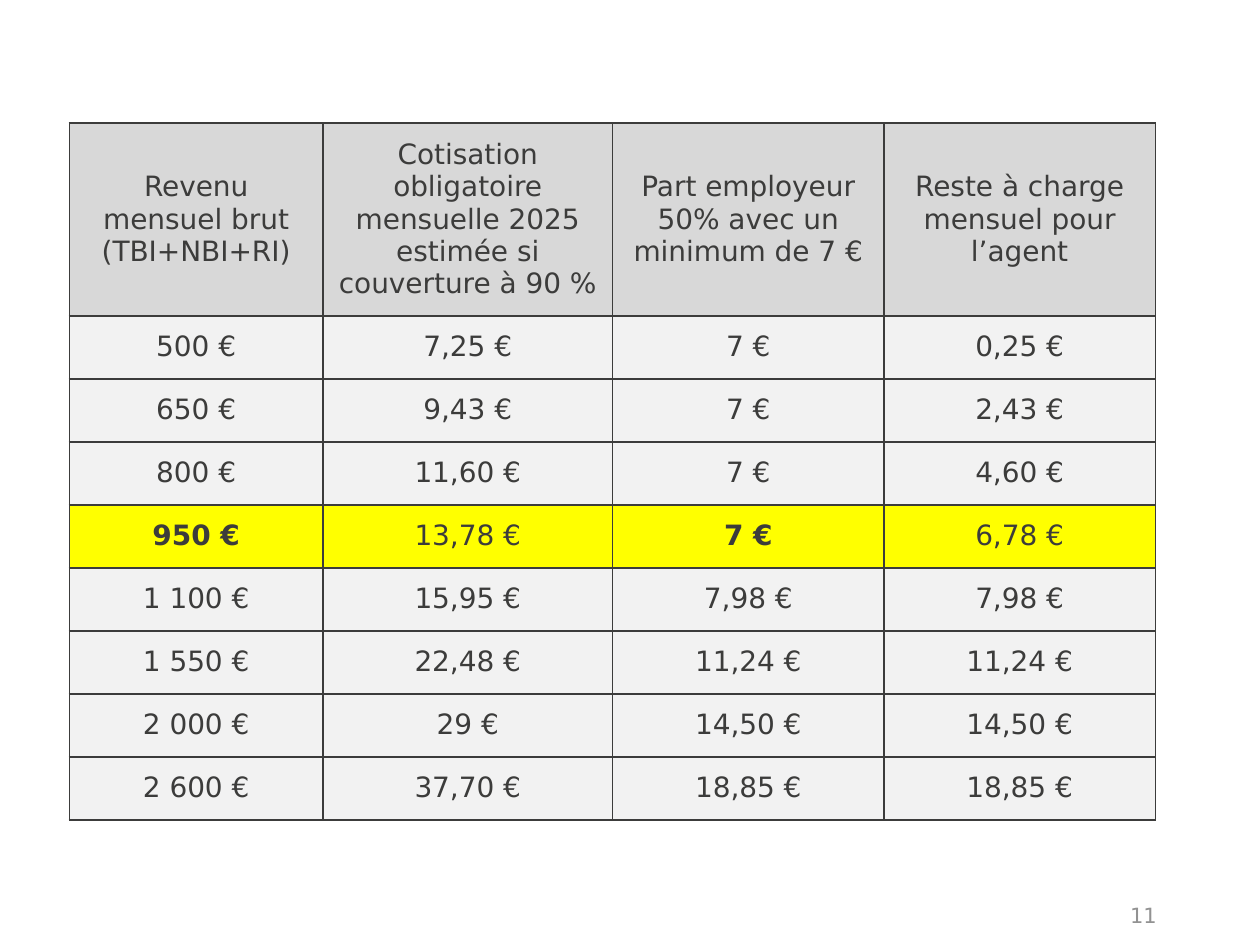
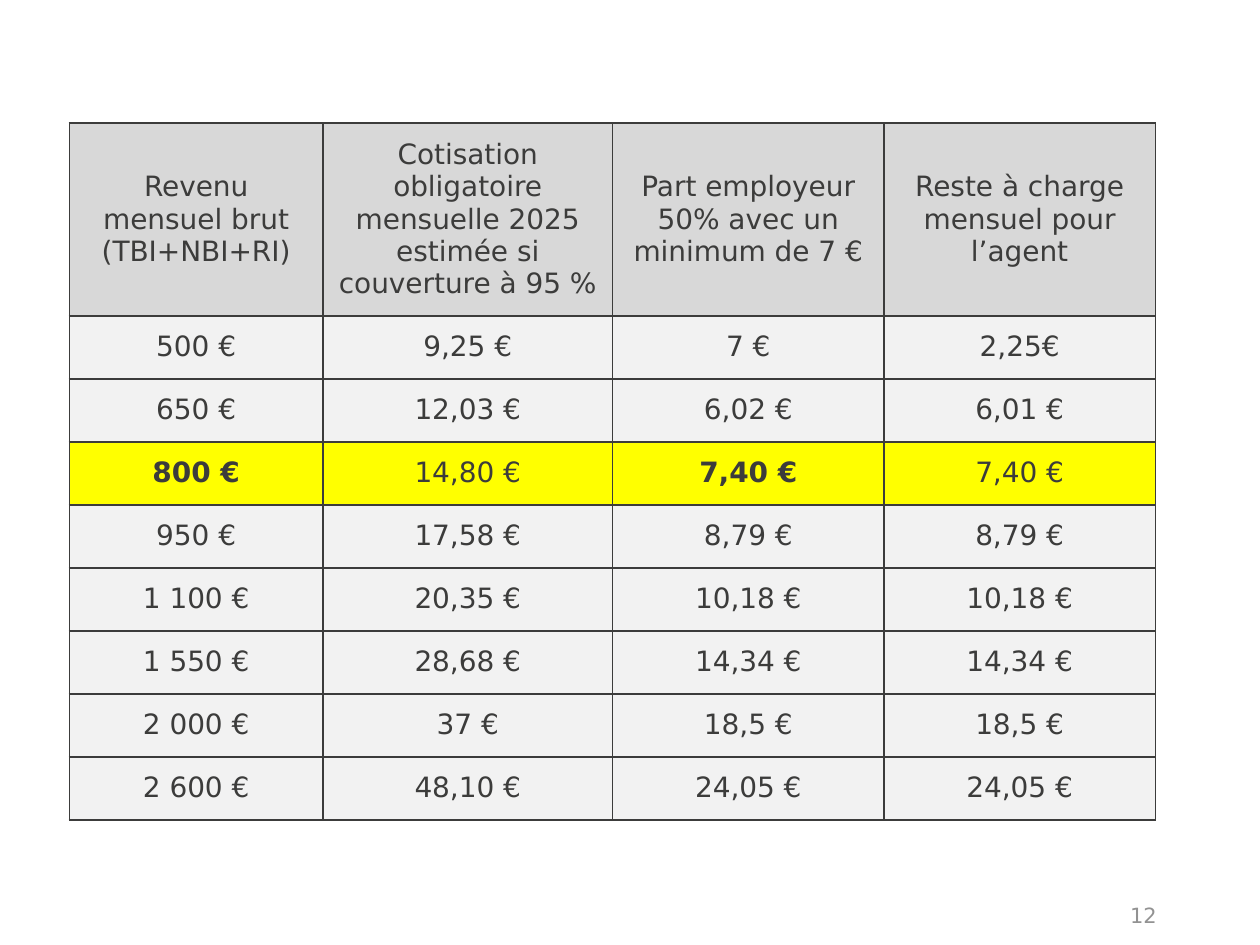
import dataclasses

import lxml.etree
import pptx
import pptx.dml.color
import pptx.enum.text
import pptx.oxml.ns
import pptx.presentation
import pptx.slide
import pptx.table
import pptx.text.text
import pptx.util
from pptx.util import Cm

FONT = "DejaVu Sans"
INK = "3C3C3B"
GREY = "929292"
HEADER_FILL = "D8D8D8"
BODY_FILL = "F2F2F2"
HIGHLIGHT_FILL = "FFFF00"

COLUMN_WIDTHS = (5.11, 5.84, 5.47, 5.47)
HEADER_HEIGHT = 3.48
ROW_HEIGHT = 1.27
CELL_MARGIN = Cm(0.25)
BOLD_COLUMNS = (0, 2)
INCOMES = ("500 €", "650 €", "800 €", "950 €",
           "1 100 €", "1 550 €", "2 000 €", "2 600 €")


@dataclasses.dataclass(frozen=True)
class ContributionPage:
    number: int
    coverage: str
    highlighted_income: str
    amounts: tuple[tuple[str, str, str], ...]

    def header(self) -> tuple[str, ...]:
        return (
            "Revenu mensuel brut (TBI+NBI+RI)",
            f"Cotisation obligatoire mensuelle 2025 estimée si couverture à {self.coverage}",
            "Part employeur 50% avec un minimum de 7 €",
            "Reste à charge mensuel pour l’agent",
        )


PAGES = (
    ContributionPage(11, "90 %", "950 €", (
        ("7,25 €", "7 €", "0,25 €"),
        ("9,43 €", "7 €", "2,43 €"),
        ("11,60 €", "7 €", "4,60 €"),
        ("13,78 €", "7 €", "6,78 €"),
        ("15,95 €", "7,98 €", "7,98 €"),
        ("22,48 €", "11,24 €", "11,24 €"),
        ("29 €", "14,50 €", "14,50 €"),
        ("37,70 €", "18,85 €", "18,85 €"),
    )),
    ContributionPage(12, "95 %", "800 €", (
        ("9,25 €", "7 €", "2,25€"),
        ("12,03 €", "6,02 €", "6,01 €"),
        ("14,80 €", "7,40 €", "7,40 €"),
        ("17,58 €", "8,79 €", "8,79 €"),
        ("20,35 €", "10,18 €", "10,18 €"),
        ("28,68 €", "14,34 €", "14,34 €"),
        ("37 €", "18,5 €", "18,5 €"),
        ("48,10 €", "24,05 €", "24,05 €"),
    )),
)


def color(value: str) -> pptx.dml.color.RGBColor:
    return pptx.dml.color.RGBColor.from_string(value)


def write_text(frame: pptx.text.text.TextFrame, text: str, *, size: int = 16,
               ink: str = INK, bold: bool = False, align: str = "CENTER") -> None:
    frame.word_wrap = True
    para = frame.paragraphs[0]
    para.alignment = pptx.enum.text.PP_ALIGN[align]
    span = para.add_run()
    span.text = text
    span.font.name = FONT
    span.font.size = pptx.util.Pt(size)
    span.font.bold = bold
    span.font.color.rgb = color(ink)


def add_borders(cell: pptx.table._Cell) -> None:
    properties = cell._tc.get_or_add_tcPr()
    name = pptx.oxml.ns.qn
    for side in ("a:lnL", "a:lnR", "a:lnT", "a:lnB"):
        line = lxml.etree.SubElement(properties, name(side), w=str(pptx.util.Pt(1)))
        fill = lxml.etree.SubElement(line, name("a:solidFill"))
        lxml.etree.SubElement(fill, name("a:srgbClr"), val=INK)


def format_cell(cell: pptx.table._Cell, text: str, *, fill: str, bold: bool) -> None:
    cell.margin_left = cell.margin_right = CELL_MARGIN
    cell.margin_top = cell.margin_bottom = CELL_MARGIN
    cell.vertical_anchor = pptx.enum.text.MSO_ANCHOR.MIDDLE
    add_borders(cell)
    cell.fill.solid()
    cell.fill.fore_color.rgb = color(fill)
    write_text(cell.text_frame, text, bold=bold)


def add_contribution_table(slide: pptx.slide.Slide, page: ContributionPage) -> None:
    rows = [page.header()]
    rows += [(income, *amounts) for income, amounts in zip(INCOMES, page.amounts)]
    heights = [HEADER_HEIGHT] + [ROW_HEIGHT] * len(INCOMES)
    table = slide.shapes.add_table(
        len(rows), len(COLUMN_WIDTHS), Cm(1.4), Cm(2.48),
        Cm(sum(COLUMN_WIDTHS)), Cm(sum(heights))).table
    for column, width in zip(table.columns, COLUMN_WIDTHS):
        column.width = Cm(width)
    for row_index, (row, height, texts) in enumerate(zip(table.rows, heights, rows)):
        row.height = Cm(height)
        highlighted = texts[0] == page.highlighted_income
        fill = HIGHLIGHT_FILL if highlighted else BODY_FILL
        if row_index == 0:
            fill = HEADER_FILL
        for column_index, text in enumerate(texts):
            format_cell(row.cells[column_index], text, fill=fill,
                        bold=highlighted and column_index in BOLD_COLUMNS)


def add_page_number(slide: pptx.slide.Slide, number: int) -> None:
    box = slide.shapes.add_textbox(Cm(22.33), Cm(17.93), Cm(1.24), Cm(1.02))
    box.text_frame.vertical_anchor = pptx.enum.text.MSO_ANCHOR.MIDDLE
    write_text(box.text_frame, str(number), size=12, ink=GREY, align="RIGHT")


def add_page(deck: pptx.presentation.Presentation, page: ContributionPage) -> None:
    slide = deck.slides.add_slide(deck.slide_layouts.get_by_name("Blank"))
    add_page_number(slide, page.number)
    add_contribution_table(slide, page)


def main() -> None:
    deck = pptx.Presentation()
    deck.slide_width = Cm(25.4)
    deck.slide_height = Cm(19.05)
    for page in PAGES:
        add_page(deck, page)
    deck.save("out.pptx")


if __name__ == "__main__":
    main()
